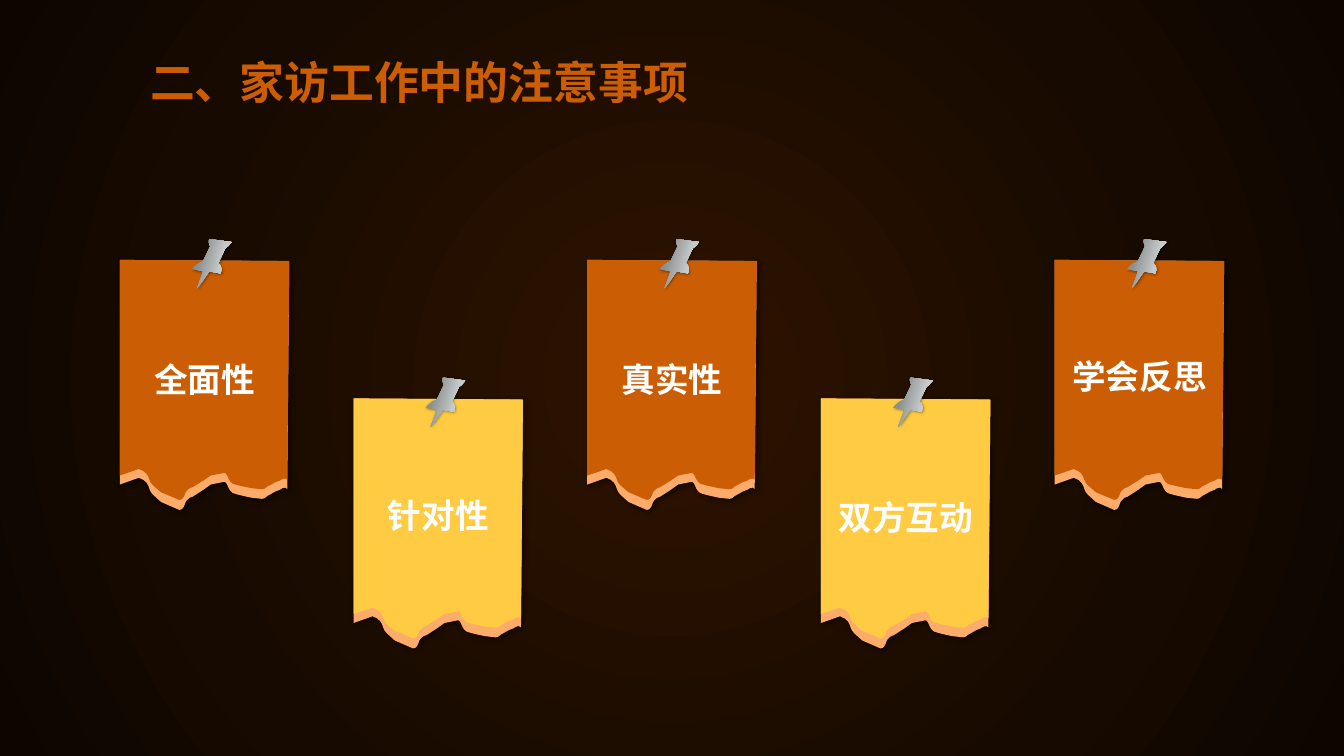
from lxml import etree
from pptx import Presentation
from pptx import util as u
from pptx.dml.color import RGBColor
from pptx.enum import shapes, text
from pptx.oxml import ns

FONT = "Noto Sans CJK SC"
ORANGE = RGBColor(0xCB, 0x5E, 0x04)
YELLOW = RGBColor(0xFE, 0xCB, 0x42)
TORN_EDGE = RGBColor(0xFC, 0xAC, 0x6A)
WHITE = RGBColor(0xFF, 0xFF, 0xFF)
BLACK = RGBColor(0, 0, 0)
BACKDROP_STOPS = [(0, RGBColor(0x2E, 0x13, 0x00)), (67, RGBColor(0x17, 0x0A, 0x00)),
                  (100, RGBColor(0x0C, 0x05, 0x00))]
PIN_STOPS = [(0, RGBColor(0x8A, 0x8F, 0x8F)), (35, RGBColor(0x8A, 0x8F, 0x8F)),
             (64, RGBColor(0xC7, 0xCA, 0xCA)), (83, RGBColor(0xBD, 0xBD, 0xBD))]

# Outlines in cm: one point is a straight step, three points are a curve
PAPER = [
    [(0, 0)], [(0, 5.66)], [(0.48, 5.49)],
    [(0.79, 5.59), (0.69, 5.79), (0.84, 5.92)], [(1.04, 6.1)], [(1.5, 6.3)],
    [(1.63, 6.3), (1.63, 6.12), (1.68, 6.07)],
    [(1.73, 6.02), (1.75, 5.99), (1.83, 5.97)],
    [(2.11, 5.79)], [(2.29, 5.66)], [(2.64, 5.59)],
    [(2.72, 5.61), (2.72, 5.79), (2.84, 5.87)],
    [(2.95, 5.92), (3.23, 5.97), (3.3, 5.99)], [(3.58, 6.02)],
    [(3.66, 6.02), (3.68, 5.97), (3.73, 5.94)],
    [(3.78, 5.92), (3.86, 5.87), (3.91, 5.84)], [(4.04, 5.79)],
    [(4.06, 5.77), (4.11, 5.74), (4.17, 5.74)], [(4.22, 5.77)], [(4.27, 0.03)],
]
PIN = [
    [(0.88, 0)], [(1.33, 0.34)], [(1.28, 0.37), (1.18, 0.4), (1.12, 0.4)],
    [(0.78, 0.64)], [(0.82, 0.72), (0.79, 0.83), (0.7, 0.89)], [(0.48, 0.71)],
    [(0.31, 0.79), (0.19, 0.86), (0, 0.93)],
    [(0.12, 0.83), (0.23, 0.74), (0.35, 0.63)], [(0.13, 0.45)],
    [(0.21, 0.41), (0.28, 0.39), (0.39, 0.4)], [(0.47, 0.41)], [(0.81, 0.17)],
    [(0.82, 0.11), (0.82, 0.05), (0.88, 0)],
]
FRONT_SCALE = 0.96  # the front sheet ends above the torn edge

# Wording, line spacing
NOTES = [("全面性", 1.1), ("针对性", None), ("真实性", 1.1),
         ("双方互动", 1.1), ("学会反思", None)]


def write(shape, words, size, color, align, spacing=None):
    frame = shape.text_frame
    frame.word_wrap = True
    frame.vertical_anchor = text.MSO_ANCHOR.MIDDLE
    para = frame.paragraphs[0]
    para.alignment = align
    para.line_spacing = spacing
    span = para.add_run()
    span.text = words
    span.font.name = FONT
    span.font.size = u.Pt(size)
    span.font.bold = True
    span.font.color.rgb = color
    etree.SubElement(span.font._element, ns.qn("a:ea"), typeface=FONT)
    return frame


def fill_gradient(shape, stops):
    """Fill with colour stops and return the element that takes the direction."""
    shape.fill.background()
    blank = shape.element.spPr.find(ns.qn("a:noFill"))
    gradient = etree.Element(ns.qn("a:gradFill"), rotWithShape="1")
    stop_list = etree.SubElement(gradient, ns.qn("a:gsLst"))
    for place, color in stops:
        stop = etree.SubElement(stop_list, ns.qn("a:gs"), pos=str(place * 1000))
        etree.SubElement(stop, ns.qn("a:srgbClr"), val=str(color))
    blank.getparent().replace(blank, gradient)
    return gradient


def add_shadow(shape, opacity, blur, distance):
    effects = shape.element.spPr.find(ns.qn("a:effectLst"))
    shadow = etree.SubElement(effects, ns.qn("a:outerShdw"), blurRad=str(u.Pt(blur)),
                              dist=str(u.Pt(distance)), dir="2700000",
                              algn="tl", rotWithShape="0")
    color = etree.SubElement(shadow, ns.qn("a:srgbClr"), val=str(BLACK))
    etree.SubElement(color, ns.qn("a:alpha"), val=str(opacity * 1000))


def flatten(outline, steps=6):
    """Turn straight steps and curves into a list of points."""
    points = []
    for part in outline:
        if len(part) == 1:
            points += part
            continue
        corners = [points[-1], *part]
        for step in range(1, steps + 1):
            t = step / steps
            weights = ((1 - t) ** 3, 3 * t * (1 - t) ** 2, 3 * t * t * (1 - t), t ** 3)
            points.append(tuple(sum(w * c[axis] for w, c in zip(weights, corners))
                                for axis in (0, 1)))
    return points


def add_outline(page, outline, left, top, stretch=1):
    points = [(u.Cm(x), u.Cm(y * stretch)) for x, y in flatten(outline)]
    builder = page.shapes.build_freeform(*points[0])
    builder.add_line_segments(points[1:], close=True)
    shape = builder.convert_to_shape(u.Cm(left), u.Cm(top))
    shape.shadow.inherit = False
    shape.line.fill.background()
    return shape


def add_backdrop(page, width, height):
    backdrop = page.shapes.add_shape(shapes.MSO_SHAPE.RECTANGLE, 0, 0, width, height)
    backdrop.shadow.inherit = False
    backdrop.line.fill.background()
    gradient = fill_gradient(backdrop, BACKDROP_STOPS)
    circle = etree.SubElement(gradient, ns.qn("a:path"), path="circle")
    etree.SubElement(circle, ns.qn("a:fillToRect"),
                     {side: "50000" for side in "ltrb"})
    # The backdrop belongs to the layout, behind everything on the page
    page.slide_layout.shapes.element.insert(2, backdrop.element)


def add_title(page, left, top, width, height):
    title = page.shapes.title
    title.left, title.top = u.Cm(left), u.Cm(top)
    title.width, title.height = u.Cm(width), u.Cm(height)
    frame = write(title, "二、家访工作中的注意事项", 32, ORANGE, text.PP_ALIGN.LEFT)
    frame.auto_size = text.MSO_AUTO_SIZE.NONE


def add_note(page, left, top, words, color, spacing):
    # Torn edge behind the sheet
    edge = add_outline(page, PAPER, left, top)
    edge.fill.solid()
    edge.fill.fore_color.rgb = TORN_EDGE
    add_shadow(edge, 50, 4, 2)

    # Coloured sheet with its words
    sheet = add_outline(page, PAPER, left, top, FRONT_SCALE)
    sheet.fill.solid()
    sheet.fill.fore_color.rgb = color
    frame = write(sheet, words, 24, WHITE, text.PP_ALIGN.CENTER, spacing)
    frame.margin_left = frame.margin_right = u.Cm(0.2)
    frame.margin_top, frame.margin_bottom = u.Cm(0.13), u.Cm(0.3)

    # Pin
    pin = add_outline(page, PIN, left + 1.63, top - 0.48)
    pin.rotation = -29.4
    gradient = fill_gradient(pin, PIN_STOPS)
    etree.SubElement(gradient, ns.qn("a:lin"), ang="2700000", scaled="0")
    add_shadow(pin, 40, 2, 1)


def add_notes(page, left, top, pitch, drop):
    for index, (words, spacing) in enumerate(NOTES):
        low = index % 2
        add_note(page, left + index * pitch, top + low * drop, words,
                 YELLOW if low else ORANGE, spacing)


def main():
    deck = Presentation()
    deck.slide_width, deck.slide_height = u.Cm(33.87), u.Cm(19.05)
    page = deck.slides.add_slide(deck.slide_layouts[5])
    add_backdrop(page, deck.slide_width, deck.slide_height)
    add_title(page, 3.53, 1.27, 15.47, 1.55)
    add_notes(page, left=3.02, top=6.55, pitch=5.89, drop=3.49)
    deck.save("out.pptx")


if __name__ == "__main__":
    main()
